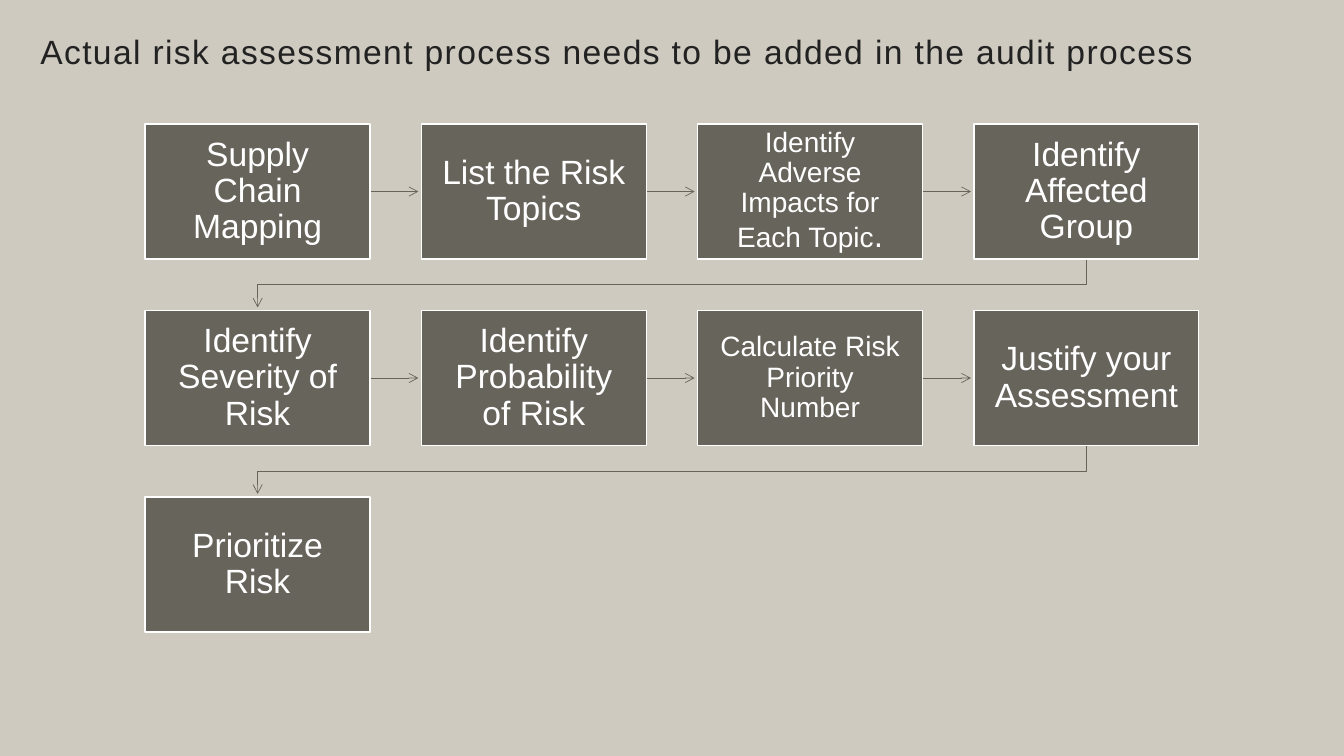
from dataclasses import dataclass

from lxml import etree
from pptx import Presentation
from pptx.dml.color import RGBColor
from pptx.enum.shapes import MSO_CONNECTOR, MSO_SHAPE
from pptx.enum.text import MSO_ANCHOR, PP_ALIGN
from pptx.oxml.ns import qn
from pptx.util import Inches, Pt

RECT = MSO_SHAPE.RECTANGLE
STRAIGHT = MSO_CONNECTOR.STRAIGHT
MIDDLE, TOP = MSO_ANCHOR.MIDDLE, MSO_ANCHOR.TOP
CENTER, LEFT = PP_ALIGN.CENTER, PP_ALIGN.LEFT


@dataclass(frozen=True)
class Theme:
    background: RGBColor = RGBColor(0xCF, 0xCA, 0xC0)
    box: RGBColor = RGBColor(0x67, 0x64, 0x5C)
    border: RGBColor = RGBColor(0xFF, 0xFF, 0xFF)
    box_text: RGBColor = RGBColor(0xFF, 0xFF, 0xFF)
    title_text: RGBColor = RGBColor(0x22, 0x22, 0x22)
    font: str = "Arial"
    large: int = 24
    small: int = 20
    border_width: float = 1
    arrow_width: float = 0.5


@dataclass(frozen=True)
class Grid:
    left: float = 1.44
    top: float = 1.23
    col_step: float = 2.74
    row_step: float = 1.85
    width: float = 2.23
    height: float = 1.34
    columns: int = 4
    tip_gap: float = 0.03

    def corner(self, index: int) -> tuple[float, float]:
        row, col = divmod(index, self.columns)
        return self.left + col * self.col_step, self.top + row * self.row_step


@dataclass(frozen=True)
class Step:
    text: str
    size: int
    inset: float = 0.19
    ending: str = ""


THEME = Theme()
GRID = Grid()
TITLE = "Actual risk assessment process needs to be added in the audit process"
STEPS = [
    Step("Supply Chain Mapping", THEME.large),
    Step("List the Risk Topics", THEME.large),
    Step("Identify Adverse Impacts for Each Topic", THEME.small, 0.16, "."),
    Step("Identify Affected Group", THEME.large),
    Step("Identify Severity of Risk", THEME.large),
    Step("Identify Probability of Risk", THEME.large),
    Step("Calculate Risk Priority Number", THEME.small, 0.16),
    Step("Justify your Assessment", THEME.large),
    Step("Prioritize Risk", THEME.large),
]


def set_all(target, values: dict) -> None:
    for name, value in values.items():
        setattr(target, name, value)


def set_frame(tf, inset: float, anchor) -> None:
    sides = ("margin_left", "margin_top", "margin_right", "margin_bottom")
    set_all(tf, {side: Inches(inset) for side in sides})
    set_all(tf, {"word_wrap": True, "vertical_anchor": anchor})


def add_run(p, text: str, size: int, color: RGBColor):
    r = p.add_run()
    r.text = text
    set_all(r.font, {"name": THEME.font, "size": Pt(size)})
    r.font.color.rgb = color
    return r


def add_title(s) -> None:
    tf = s.shapes.add_textbox(Inches(0.4), Inches(0.19), Inches(12.02), Inches(0.49)).text_frame
    set_frame(tf, 0, TOP)
    p = tf.paragraphs[0]
    set_all(p, {"alignment": LEFT, "line_spacing": 1.3})
    r = add_run(p, TITLE, THEME.large, THEME.title_text)
    r.font._element.set("spc", "100")


def add_step(s, step: Step, index: int) -> None:
    x, y = GRID.corner(index)
    sp = s.shapes.add_shape(RECT, Inches(x), Inches(y), Inches(GRID.width), Inches(GRID.height))
    sp.shadow.inherit = False
    sp.fill.solid()
    sp.fill.fore_color.rgb = THEME.box
    sp.line.color.rgb = THEME.border
    sp.line.width = Pt(THEME.border_width)
    set_frame(sp.text_frame, step.inset, MIDDLE)
    p = sp.text_frame.paragraphs[0]
    set_all(p, {"alignment": CENTER, "line_spacing": 0.9})
    add_run(p, step.text, step.size, THEME.box_text)
    if step.ending:
        add_run(p, step.ending, THEME.large, THEME.box_text)


def style_arrow(sp) -> None:
    sp.line.color.rgb = THEME.box
    sp.line.width = Pt(THEME.arrow_width)
    sp_pr = sp._element.spPr
    etree.SubElement(sp_pr.find(qn("a:ln")), qn("a:tailEnd"), type="arrow")
    etree.SubElement(sp_pr, qn("a:effectLst"))


def add_arrow(s, index: int) -> None:
    """Link a step to the next one, turning back at the end of a row."""
    x, y = GRID.corner(index)
    next_x, next_y = GRID.corner(index + 1)
    if next_y == y:
        mid = Inches(y + GRID.height / 2)
        sp = s.shapes.add_connector(
            STRAIGHT, Inches(x + GRID.width), mid, Inches(next_x - GRID.tip_gap), mid)
    else:
        start_x, end_x = x + GRID.width / 2, next_x + GRID.width / 2
        bottom = y + GRID.height
        turn = (bottom + next_y) / 2
        points = [(start_x, turn), (end_x, turn), (end_x, next_y - GRID.tip_gap)]
        fb = s.shapes.build_freeform(Inches(start_x), Inches(bottom))
        fb.add_line_segments([(Inches(a), Inches(b)) for a, b in points], close=False)
        sp = fb.convert_to_shape()
        sp.fill.background()
    style_arrow(sp)


def main() -> None:
    prs = Presentation()
    set_all(prs, {"slide_width": Inches(13.33), "slide_height": Inches(7.5)})
    s = prs.slides.add_slide(prs.slide_layouts[6])
    s.background.fill.solid()
    s.background.fill.fore_color.rgb = THEME.background

    # Process flow
    for index, step in enumerate(STEPS):
        if index < len(STEPS) - 1:
            add_arrow(s, index)
        add_step(s, step, index)

    # Heading
    add_title(s)
    prs.save("out.pptx")


if __name__ == "__main__":
    main()
